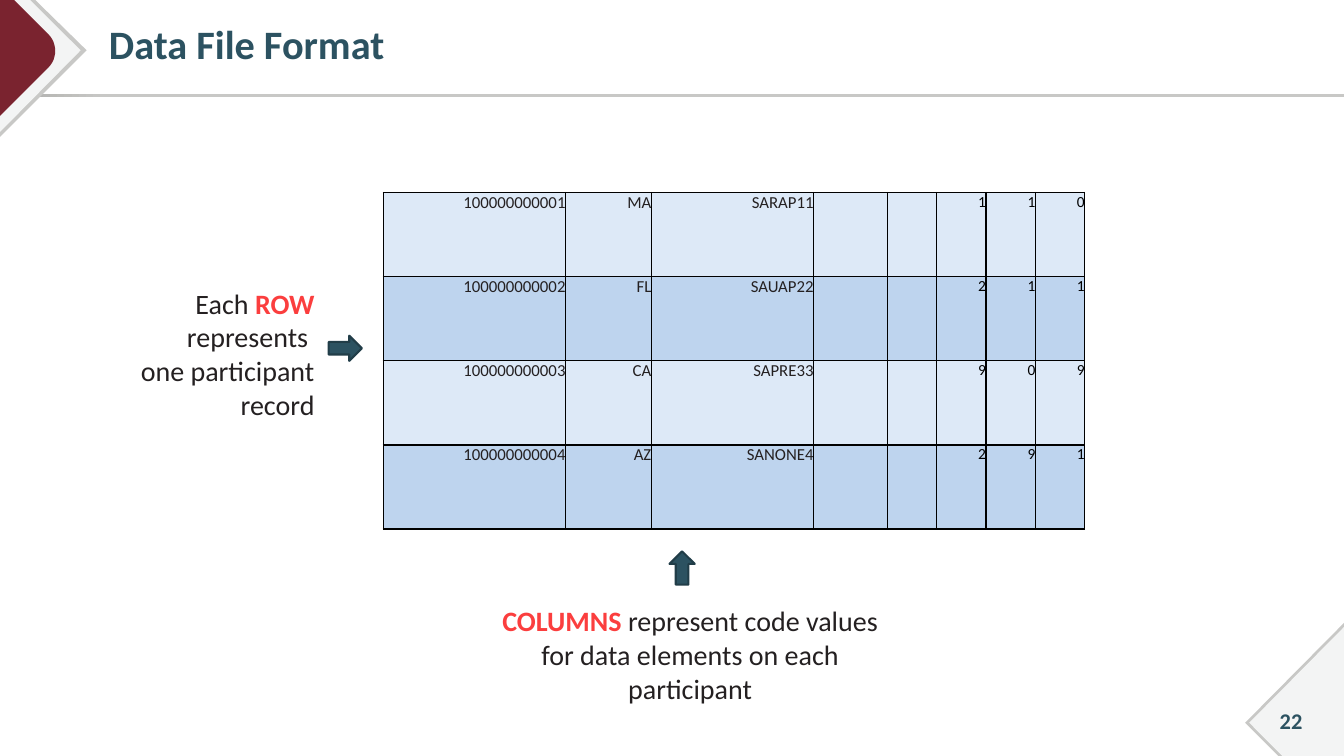
"""Build the Data File Format slide with its record table and callouts."""
from lxml.etree import SubElement
from pptx import Presentation
from pptx.dml.color import RGBColor
from pptx.enum.shapes import MSO_SHAPE
from pptx.enum.text import MSO_ANCHOR, PP_ALIGN
from pptx.oxml.ns import qn
from pptx.util import Inches, Pt

WIDE, HIGH = 13.33, 7.5
FONT = "Calibri"
HUES = {"teal": "2C5261", "edge": "213D48", "ink": "242021", "red": "FB3E3E",
        "wine": "7A232F", "gray": "C8C8C6", "dusk": "ABABA8", "mist": "F3F4F4",
        "pale": "DDE9F7", "blue": "BED4EE", "black": "000000"}

TITLE = "Data File Format"
PAGE = "22"
ROWS = [
    ("100000000001", "MA", "SARAP11", "", "", "1", "1", "0"),
    ("100000000002", "FL", "SAUAP22", "", "", "2", "1", "1"),
    ("100000000003", "CA", "SAPRE33", "", "", "9", "0", "9"),
    ("100000000004", "AZ", "SANONE4", "", "", "2", "9", "1"),
]
COLS = [1.81, 0.85, 1.61, 0.73] + [0.49] * 4
GRID = (3.8, 1.91, sum(COLS), 3.34)
NOTES = [
    ((1.21, 2.84, 1.91, 2.1), PP_ALIGN.RIGHT,
     [[("Each ", "ink"), ("ROW", "red")], [("represents ", "ink")],
      [("one participant record", "ink")]]),
    ((4.85, 5.99, 3.99, 0.73), PP_ALIGN.CENTER,
     [[("COLUMNS ", "red"),
       ("represent code values for data elements on each participant", "ink")]]),
]
ARROWS = [(MSO_SHAPE.UP_ARROW, (6.64, 5.47, 0.25, 0.33)),
          (MSO_SHAPE.RIGHT_ARROW, (3.26, 3.33, 0.33, 0.25))]


def curve(ends, steps=12):
    """Return points along a cubic curve."""
    spots = []
    for step in range(1, steps + 1):
        t = step / steps
        parts = ((1 - t) ** 3, 3 * t * (1 - t) ** 2, 3 * t * t * (1 - t), t ** 3)
        spots.append(tuple(sum(w * p[i] for w, p in zip(parts, ends)) for i in (0, 1)))
    return spots


BEND = [(0.48, 0.34), (0.57, 0.43), (0.57, 0.58), (0.48, 0.67)]
CORNERS = [
    ("gray", [(0, 0), (0.35, 0), (0.86, 0.5), (0, 1.36)]),
    ("mist", [(0, 0), (0.3, 0), (0.8, 0.5), (0, 1.31)]),
    ("wine", [(0, 0), (0.14, 0), BEND[0], *curve(BEND), (0, 1.15)]),
    ("gray", [(WIDE, 6.18), (WIDE, HIGH), (12.68, HIGH), (12.35, 7.17)]),
    ("mist", [(WIDE, 6.22), (WIDE, HIGH), (12.72, HIGH), (12.39, 7.17)]),
]


def hue(name):
    return RGBColor.from_string(HUES[name])


def box(sizes):
    return [Inches(size) for size in sizes]


def style(run, size, tint, bold=False):
    font = run.font
    font.name, font.size, font.bold = FONT, Pt(size), bold
    font.color.rgb = hue(tint)


def paint(shape, tint, edge=None):
    shape.shadow.inherit = False
    shape.fill.solid()
    shape.fill.fore_color.rgb = hue(tint)
    if edge:
        shape.line.color.rgb = hue(edge)
        shape.line.width = Pt(1.5)
    else:
        shape.line.fill.background()


def frame(shapes):
    rule = shapes.add_shape(MSO_SHAPE.RECTANGLE, *box((0, 0.93, WIDE, 0.03)))
    paint(rule, "gray")
    rule.fill.gradient()
    rule.fill.gradient_angle = 0
    for stop, (spot, tint) in zip(rule.fill.gradient_stops, [(0, "dusk"), (0.08, "gray")]):
        stop.position = spot
        stop.color.rgb = hue(tint)
    for tint, spots in CORNERS:
        first, *rest = [box(spot) for spot in spots]
        pen = shapes.build_freeform(*first)
        pen.add_line_segments(rest)
        paint(pen.convert_to_shape(), tint)


def write(shapes, place, align, lines, size, bold=()):
    text = shapes.add_textbox(*box(place)).text_frame
    text.word_wrap = True
    text.margin_left = text.margin_right = text.margin_top = text.margin_bottom = 0
    for i, line in enumerate(lines):
        para = text.add_paragraph() if i else text.paragraphs[0]
        para.alignment = align
        for words, tint in line:
            run = para.add_run()
            run.text = words
            style(run, size, tint, tint in bold)
    return text


def border(cell):
    props = cell._tc.get_or_add_tcPr()
    for i, side in enumerate(("lnL", "lnR", "lnT", "lnB")):
        line = props.makeelement(qn("a:" + side), {"w": str(Pt(1))})
        fill = SubElement(line, qn("a:solidFill"))
        SubElement(fill, qn("a:srgbClr"), val=HUES["black"])
        props.insert(i, line)


def table(shapes):
    grid = shapes.add_table(len(ROWS), len(COLS), *box(GRID)).table
    for col, width in zip(grid.columns, COLS):
        col.width = Inches(width)
    for r, row in enumerate(ROWS):
        for c, value in enumerate(row):
            cell = grid.cell(r, c)
            cell.margin_left = cell.margin_right = cell.margin_top = cell.margin_bottom = 0
            cell.fill.solid()
            cell.fill.fore_color.rgb = hue(("pale", "blue")[r % 2])
            border(cell)
            cell.text_frame.text = value
            para = cell.text_frame.paragraphs[0]
            para.alignment = PP_ALIGN.RIGHT
            for run in para.runs:
                style(run, *((12, "ink") if c < 3 else (11, "black")))


def main():
    deck = Presentation()
    deck.slide_width, deck.slide_height = box((WIDE, HIGH))
    slide = deck.slides.add_slide(deck.slide_layouts[5])
    shapes = slide.shapes
    frame(shapes)

    title = shapes.title
    title.left, title.top, title.width, title.height = box((0.88, 0.03, 12.12, 0.86))
    text = title.text_frame
    text.text = TITLE
    text.vertical_anchor = MSO_ANCHOR.MIDDLE
    text.margin_left = Inches(0.2)
    para = text.paragraphs[0]
    para.alignment, para.line_spacing = PP_ALIGN.LEFT, 0.9
    style(para.runs[0], 28.8, "teal", True)

    page = write(shapes, (12.45, 6.95, 0.71, 0.4), PP_ALIGN.CENTER,
                 [[(PAGE, "teal")]], 16, ("teal",))
    page.vertical_anchor = MSO_ANCHOR.MIDDLE
    table(shapes)
    for place, align, lines in NOTES:
        write(shapes, place, align, lines, 20, ("red",))
    for kind, place in ARROWS:
        paint(shapes.add_shape(kind, *box(place)), "teal", "edge")
    deck.save("out.pptx")


if __name__ == "__main__":
    main()
